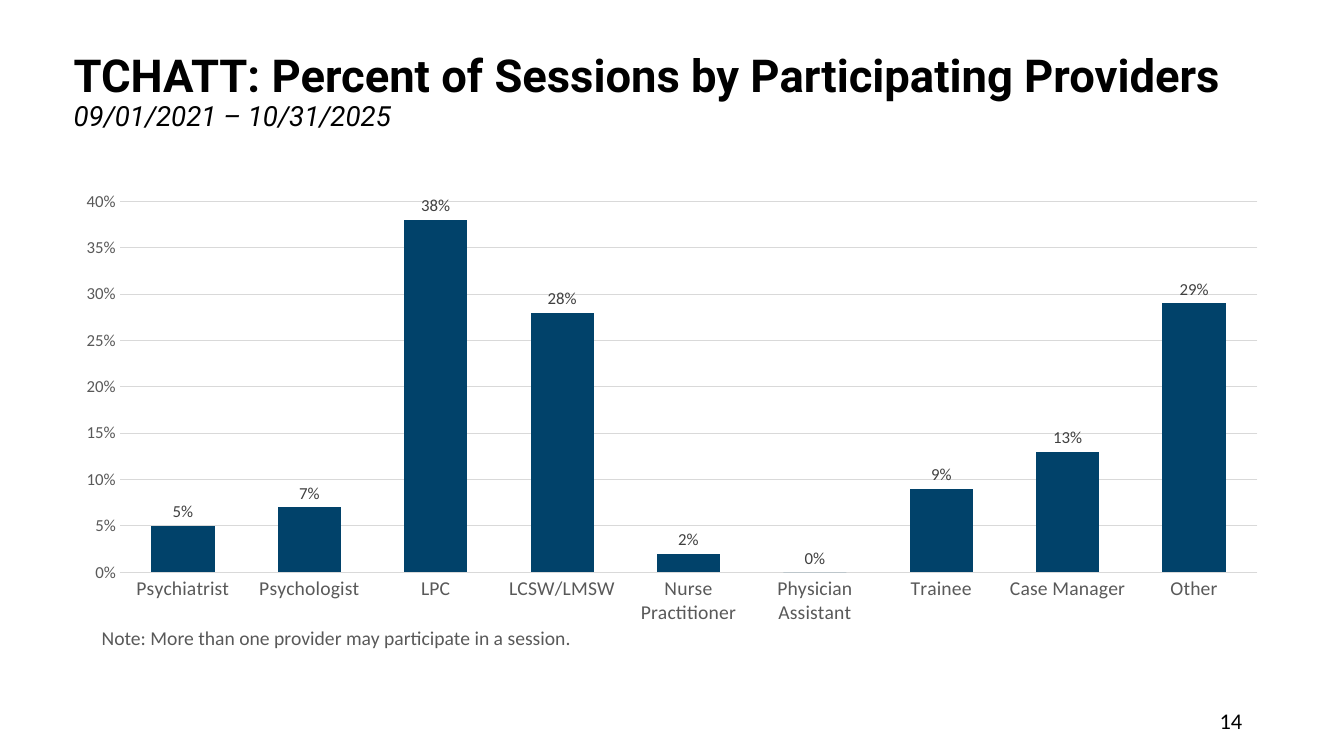
from lxml.etree import SubElement
from pptx import Presentation
from pptx.chart.data import CategoryChartData
from pptx.dml.color import RGBColor
from pptx.enum.chart import XL_CHART_TYPE, XL_LABEL_POSITION, XL_TICK_MARK
from pptx.enum.text import MSO_ANCHOR, MSO_AUTO_SIZE, PP_ALIGN
from pptx.oxml import parse_xml
from pptx.oxml.ns import nsdecls, qn
from pptx.util import Inches, Pt

TITLE = "TCHATT: Percent of Sessions by Participating Providers"
DATES = "09/01/2021 – 10/31/2025"
NOTE = "Note: More than one provider may participate in a session."
PAGE = "14"
SHARES = {
    "Psychiatrist": 0.05,
    "Psychologist": 0.07,
    "LPC": 0.38,
    "LCSW/LMSW": 0.28,
    "Nurse Practitioner": 0.02,
    "Physician Assistant": 0,
    "Trainee": 0.09,
    "Case Manager": 0.13,
    "Other": 0.29,
}
CHART_BOX = (0.62, 1.82, 12.08, 4.47)
PLOT_BOX = (1.19, 2.0, 11.28, 3.68)

BLACK = RGBColor(0x00, 0x00, 0x00)
NAVY = RGBColor(0x01, 0x42, 0x6A)
GREY = RGBColor(0x59, 0x59, 0x59)
DARK = RGBColor(0x40, 0x40, 0x40)
PALE = RGBColor(0xD9, 0xD9, 0xD9)


def style(font, size, color, name="Calibri", bold=False, italic=False):
    """Set the face, size and colour of a font."""
    font.name, font.size = name, Pt(size)
    font.bold, font.italic = bold, italic
    font.color.rgb = color


def rule(line):
    """Draw a thin pale line."""
    line.color.rgb = PALE
    line.width = Pt(0.75)


def add_title(slide):
    """Fill the title placeholder with the heading and the dates."""
    title = slide.shapes.title
    title.left, title.top, title.width, title.height = map(
        Inches, (0.63, 0.48, 12.08, 0.94))
    frame = title.text_frame
    frame.auto_size = MSO_AUTO_SIZE.NONE
    frame.vertical_anchor = MSO_ANCHOR.TOP
    para = frame.paragraphs[0]
    para.alignment = PP_ALIGN.LEFT
    para.line_spacing = 0.9
    run = para.add_run()
    run.text = TITLE
    style(run.font, 32.4, BLACK, "Roboto", bold=True)
    para.add_line_break()
    run = para.add_run()
    run.text = DATES
    style(run.font, 19.8, BLACK, "Roboto", italic=True)


def set_plot(chart):
    """Place the inner plot area within the chart."""
    left, top, width, height = CHART_BOX
    x, y, w, h = PLOT_BOX
    parts = {"x": (x - left) / width, "y": (y - top) / height,
             "w": w / width, "h": h / height}
    area = chart.plots[0]._element.getparent()
    for old in area.findall(qn("c:layout")):
        area.remove(old)
    layout = parse_xml(f"<c:layout {nsdecls('c')}/>")
    manual = SubElement(layout, qn("c:manualLayout"))
    modes = {"layoutTarget": "inner", "xMode": "edge", "yMode": "edge"}
    for tag, val in (modes | parts).items():
        text = val if tag in modes else f"{val:.3f}"
        SubElement(manual, qn(f"c:{tag}")).set("val", text)
    area.insert(0, layout)


def add_bars(slide):
    """Add the column chart of session shares."""
    data = CategoryChartData(number_format="0%")
    data.categories = list(SHARES)
    data.add_series("Series 1", list(SHARES.values()))
    chart = slide.shapes.add_chart(
        XL_CHART_TYPE.COLUMN_CLUSTERED, *map(Inches, CHART_BOX), data).chart
    chart.has_title = chart.has_legend = False
    style(chart.font, 10, BLACK)
    set_plot(chart)

    plot = chart.plots[0]
    plot.vary_by_categories = False
    plot.gap_width, plot.overlap = 100, -27
    fill = plot.series[0].format.fill
    fill.solid()
    fill.fore_color.rgb = NAVY
    plot.has_data_labels = True
    labels = plot.data_labels
    labels.show_value = True
    labels.position = XL_LABEL_POSITION.OUTSIDE_END
    labels.number_format, labels.number_format_is_linked = "0%", False
    style(labels.font, 12, DARK)

    for axis, size in ((chart.category_axis, 14), (chart.value_axis, 12)):
        axis.major_tick_mark = axis.minor_tick_mark = XL_TICK_MARK.NONE
        style(axis.tick_labels.font, size, GREY)
    rule(chart.category_axis.format.line)
    scale = chart.value_axis
    scale.minimum_scale, scale.maximum_scale = 0, 0.4
    scale.major_unit = 0.05
    scale.tick_labels.number_format = "0%"
    scale.tick_labels.number_format_is_linked = False
    scale.format.line.fill.background()
    rule(scale.major_gridlines.format.line)


def add_text(slide, text, box, size, color, align, anchor, wrap):
    """Add a one-line text box."""
    frame = slide.shapes.add_textbox(*map(Inches, box)).text_frame
    frame.word_wrap = wrap
    frame.vertical_anchor = anchor
    para = frame.paragraphs[0]
    para.alignment = align
    run = para.add_run()
    run.text = text
    style(run.font, size, color)


def main():
    """Build and save the slide."""
    deck = Presentation()
    deck.slide_width, deck.slide_height = Inches(13.33), Inches(7.5)
    slide = deck.slides.add_slide(deck.slide_layouts[5])
    add_title(slide)
    add_bars(slide)
    add_text(slide, NOTE, (0.91, 6.16, 5.27, 0.34), 14, GREY,
             PP_ALIGN.LEFT, MSO_ANCHOR.TOP, False)
    add_text(slide, PAGE, (9.42, 6.95, 3, 0.4), 16, BLACK,
             PP_ALIGN.RIGHT, MSO_ANCHOR.MIDDLE, True)
    deck.save("out.pptx")


if __name__ == "__main__":
    main()
